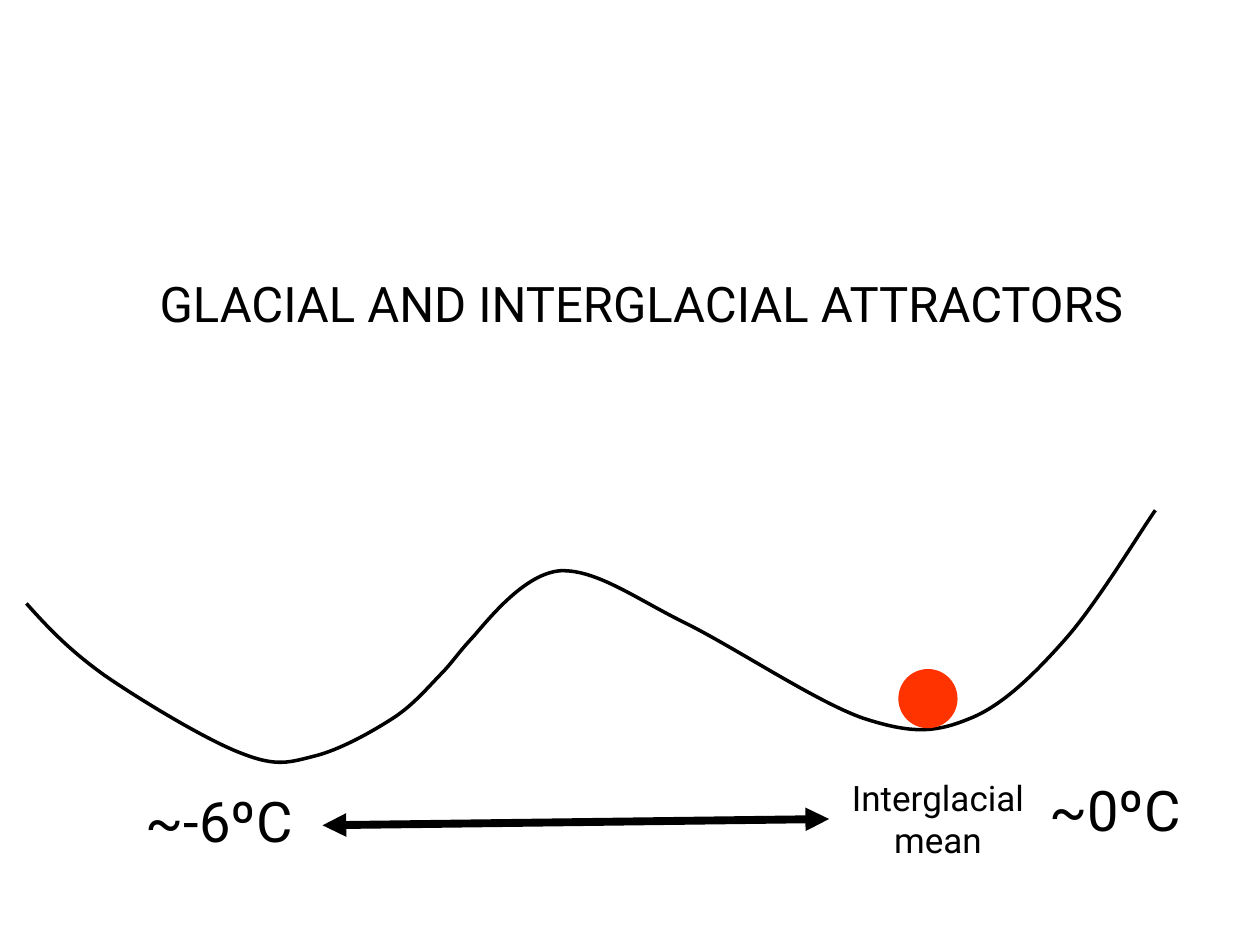
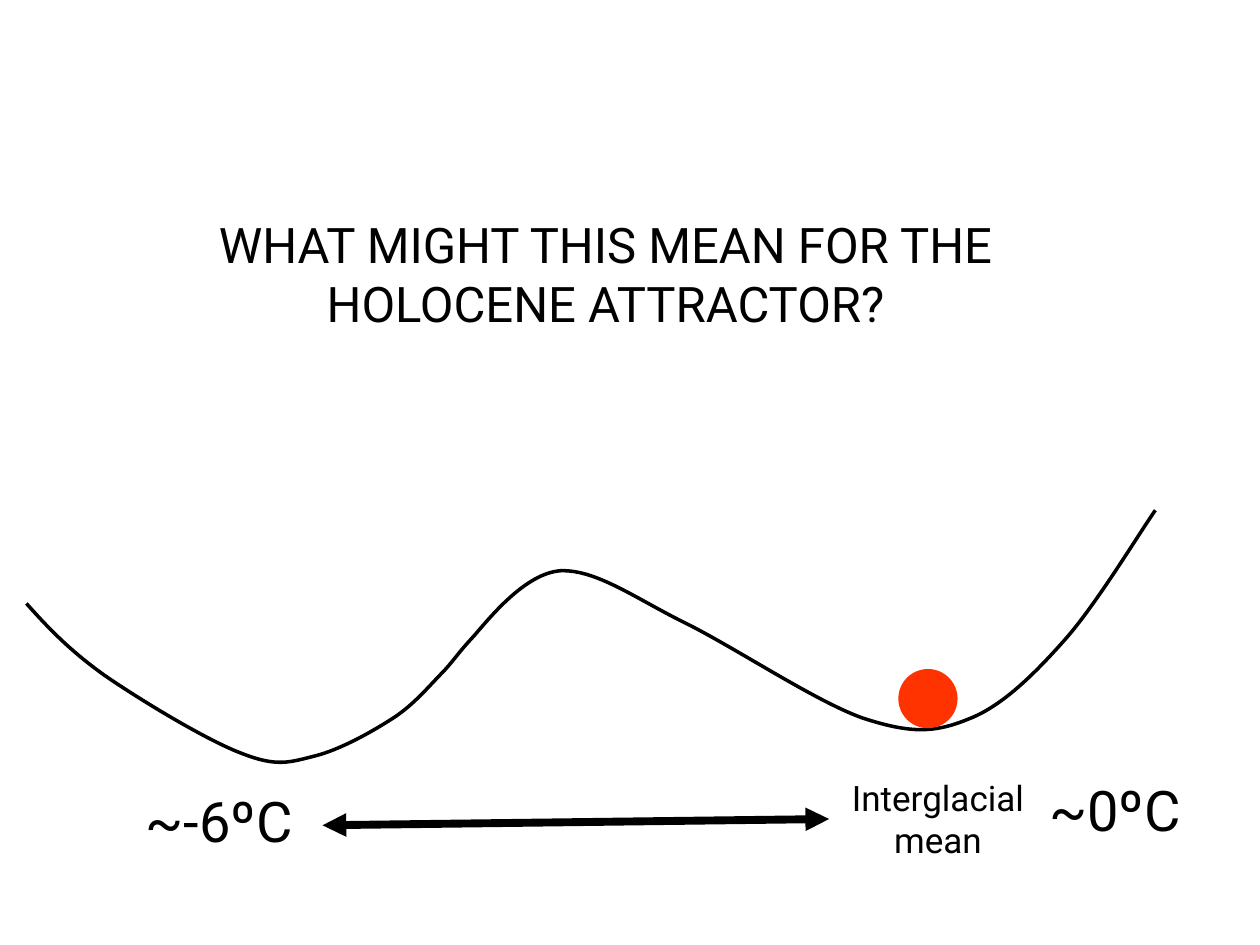
from lxml import etree
from pptx import Presentation
from pptx.dml.color import RGBColor
from pptx.enum.shapes import MSO_CONNECTOR as Connector, MSO_SHAPE as Preset
from pptx.enum.text import MSO_ANCHOR as Anchor, MSO_AUTO_SIZE as AutoSize, PP_ALIGN as Align
from pptx.oxml.ns import qn
from pptx.util import Inches, Pt

FONT = "Roboto"
BLACK = "000000"
BALL_RED = "FF3300"
TITLE_BOTTOM = 2.64
LANDSCAPE_START = (0.21, 4.79)
LANDSCAPE_CURVES = [
    [(0.38, 4.98), (0.55, 5.16), (0.83, 5.36)],
    [(1.12, 5.56), (1.65, 5.88), (1.92, 5.98)],
    [(2.2, 6.09), (2.3, 6.05), (2.5, 6)],
    [(2.7, 5.95), (2.95, 5.81), (3.12, 5.7)],
    [(3.29, 5.59), (3.41, 5.44), (3.52, 5.33)],
    [(3.62, 5.22), (3.63, 5.19), (3.76, 5.05)],
    [(3.89, 4.9), (4.17, 4.55), (4.45, 4.53)],
    [(4.74, 4.52), (5.06, 4.76), (5.45, 4.95)],
    [(5.85, 5.15), (6.48, 5.57), (6.85, 5.7)],
    [(7.22, 5.82), (7.41, 5.82), (7.68, 5.71)],
    [(7.95, 5.61), (8.21, 5.35), (8.45, 5.08)],
    [(8.7, 4.8), (9.05, 4.22), (9.17, 4.05)],
]
TITLES = [
    ("GLACIAL AND INTERGLACIAL ATTRACTORS", 0.59, 1.31, 9),
    ("WHAT MIGHT THIS MEAN FOR THE HOLOCENE ATTRACTOR?", 1.22, 1.07, 7.17),
]


def colour(value):
    """Turn a hex string into a colour."""
    return RGBColor.from_string(value)


def set_values(target, values):
    """Set every named attribute on the target."""
    for name, value in values.items():
        setattr(target, name, value)


def add_text(page, text, place, size, align=Align.LEFT, **frame_values):
    """Add a wrapped text box in the deck's font."""
    box = page.shapes.add_textbox(*map(Inches, place))
    set_values(box.text_frame, {"word_wrap": True, **frame_values})
    para = box.text_frame.paragraphs[0]
    para.alignment = align
    span = para.add_run()
    span.text = text
    set_values(span.font, {"name": FONT, "size": Pt(size)})
    span.font.color.rgb = colour(BLACK)


def add_title(page, text, left, top, width):
    """Add a centred title whose last line sits at the shared height."""
    add_text(page, text, (left, top, width, TITLE_BOTTOM - top), 28, Align.CENTER,
             vertical_anchor=Anchor.BOTTOM, margin_bottom=0)


def add_label(page, text, place, size, align=Align.LEFT):
    """Add a label whose box fits its text."""
    add_text(page, text, place, size, align, auto_size=AutoSize.SHAPE_TO_FIT_TEXT)


def style_line(line, width):
    """Make a line black with the given width in points."""
    line.color.rgb = colour(BLACK)
    line.width = Pt(width)


def add_landscape(page):
    """Draw the two valleys as one open run of cubic curves."""
    points = [tuple(map(Inches, point)) for curve in LANDSCAPE_CURVES for point in curve]
    builder = page.shapes.build_freeform(*map(Inches, LANDSCAPE_START))
    builder.add_line_segments(points, close=False)
    landscape = builder.convert_to_shape()
    landscape.shadow.inherit = False
    landscape.fill.background()
    style_line(landscape.line, 2)
    segments = list(landscape.element.iter(qn("a:lnTo")))
    for first in range(0, len(segments), 3):
        curve = etree.Element(qn("a:cubicBezTo"))
        segments[first].addprevious(curve)
        for segment in segments[first:first + 3]:
            curve.append(segment[0])
            segment.getparent().remove(segment)


def add_double_arrow(page, start, end):
    """Draw a thick line with a triangle at both ends."""
    arrow = page.shapes.add_connector(Connector.STRAIGHT, *map(Inches, start + end))
    style_line(arrow.line, 4.5)
    outline = arrow.line._get_or_add_ln()
    for tag in ("a:headEnd", "a:tailEnd"):
        etree.SubElement(outline, qn(tag), type="triangle")
    etree.SubElement(arrow.element.spPr, qn("a:effectLst"))


def add_ball(page, left, top, diameter):
    """Add the red ball resting in a valley."""
    ball = page.shapes.add_shape(Preset.OVAL, *map(Inches, (left, top, diameter, diameter)))
    ball.shadow.inherit = False
    ball.fill.solid()
    ball.fill.fore_color.rgb = colour(BALL_RED)
    ball.line.fill.background()


def add_attractor_diagram(page):
    """Add the landscape, ball and temperature scale."""
    add_landscape(page)
    add_double_arrow(page, (2.56, 6.55), (6.58, 6.5))
    add_label(page, "~-6ºC", (1.06, 6.19, 1.57, 0.64), 32)
    add_label(page, "Interglacial mean", (6.58, 6.11, 1.73, 0.77), 20, Align.CENTER)
    add_ball(page, 7.13, 5.31, 0.47)
    add_label(page, "~0ºC", (8.23, 6.11, 1.26, 0.64), 32)


def main():
    """Build and save the deck."""
    deck = Presentation()
    set_values(deck, {"slide_width": Inches(10), "slide_height": Inches(7.5)})
    for title in TITLES:
        page = deck.slides.add_slide(deck.slide_layouts[6])
        add_attractor_diagram(page)
        add_title(page, *title)
    deck.save("out.pptx")


if __name__ == "__main__":
    main()
